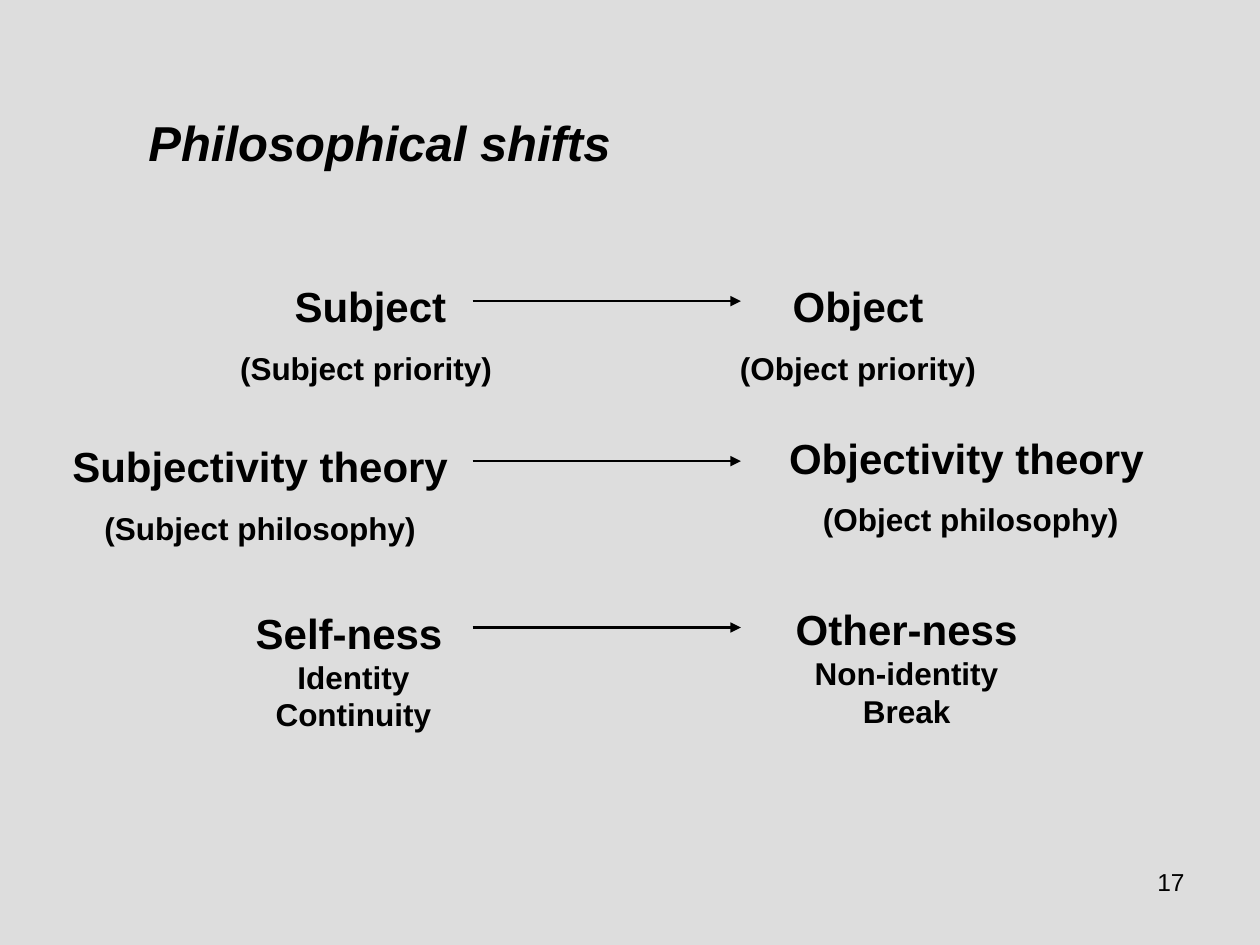
"""Build the slide on philosophical shifts from subject to object."""
from dataclasses import dataclass
from lxml.etree import SubElement
from pptx import Presentation
from pptx.dml.color import RGBColor as RGB
from pptx.enum.shapes import MSO_CONNECTOR as Link
from pptx.enum.text import PP_ALIGN as Align
from pptx.oxml.ns import qn
from pptx.util import Inches, Pt


@dataclass
class Theme:
    font: str = "Arial"
    ink: RGB = RGB(0, 0, 0)
    back: RGB = RGB(0xDD, 0xDD, 0xDD)
    title: int = 28
    head: int = 24
    note: int = 18
    page: int = 14
    gap: int = 10
    line: float = 1.5


theme = Theme()


def add_box(slide, box, align, gap, lines):
    frame = slide.shapes.add_textbox(*map(Inches, box)).text_frame
    frame.word_wrap = True
    for i, runs in enumerate(lines):
        para = frame.paragraphs[0] if i == 0 else frame.add_paragraph()
        para.alignment = align
        para.space_before = Pt(gap if i else 0)
        for text, size, bold, slant in runs:
            run = para.add_run()
            run.text = text
            font = run.font
            font.name, font.size = theme.font, Pt(size)
            font.bold, font.italic = bold, slant
            font.color.rgb = theme.ink


def add_arrow(slide, left, right, y):
    arrow = slide.shapes.add_connector(
        Link.STRAIGHT, Inches(left), Inches(y), Inches(right), Inches(y))
    arrow.line.color.rgb = theme.ink
    arrow.line.width = Pt(theme.line)
    SubElement(arrow.line._get_or_add_ln(), qn("a:tailEnd"), type="triangle")
    SubElement(arrow._element.spPr, qn("a:effectLst"))


deck = Presentation()
deck.slide_width, deck.slide_height = Inches(10), Inches(7.5)
slide = deck.slides.add_slide(deck.slide_layouts[6])
fill = slide.background.fill
fill.solid()
fill.fore_color.rgb = theme.back

add_box(slide, (7.17, 6.83, 2.33, 0.52), Align.RIGHT, 0,
        [[("17", theme.page, False, False)]])
add_box(slide, (1.08, 0.84, 4.65, 0.57), Align.LEFT, 0,
        [[("Philosophical shifts", theme.title, True, True)]])

blocks = [
    ((1.64, 2.18, 2.6, 0.95), theme.gap, "Subject", "", ["(Subject priority) "]),
    ((5.37, 2.18, 2.88, 0.95), theme.gap, "Object", "", ["(Object priority)"]),
    ((0.45, 3.45, 3.23, 0.95), theme.gap, "Subjectivity theory", " ", ["(Subject philosophy)"]),
    ((6, 3.38, 3.41, 0.95), theme.gap, "Objectivity theory", " ", ["(Object philosophy)"]),
    ((1.78, 4.77, 2.05, 1.1), 0, "Self-ness", " ", ["Identity", "Continuity"]),
    ((6.17, 4.74, 2.05, 1.1), 0, "Other-ness", "", ["Non-identity", "Break"]),
]
for box, gap, head, tail, notes in blocks:
    first = [(head, theme.head, True, False)]
    if tail:
        first.append((tail, theme.note, False, False))
    rest = [[(note, theme.note, True, False)] for note in notes]
    add_box(slide, box, Align.CENTER, gap, [first] + rest)

for y in (2.39, 3.66, 4.98):
    add_arrow(slide, 3.75, 5.88, y)

deck.save("out.pptx")
